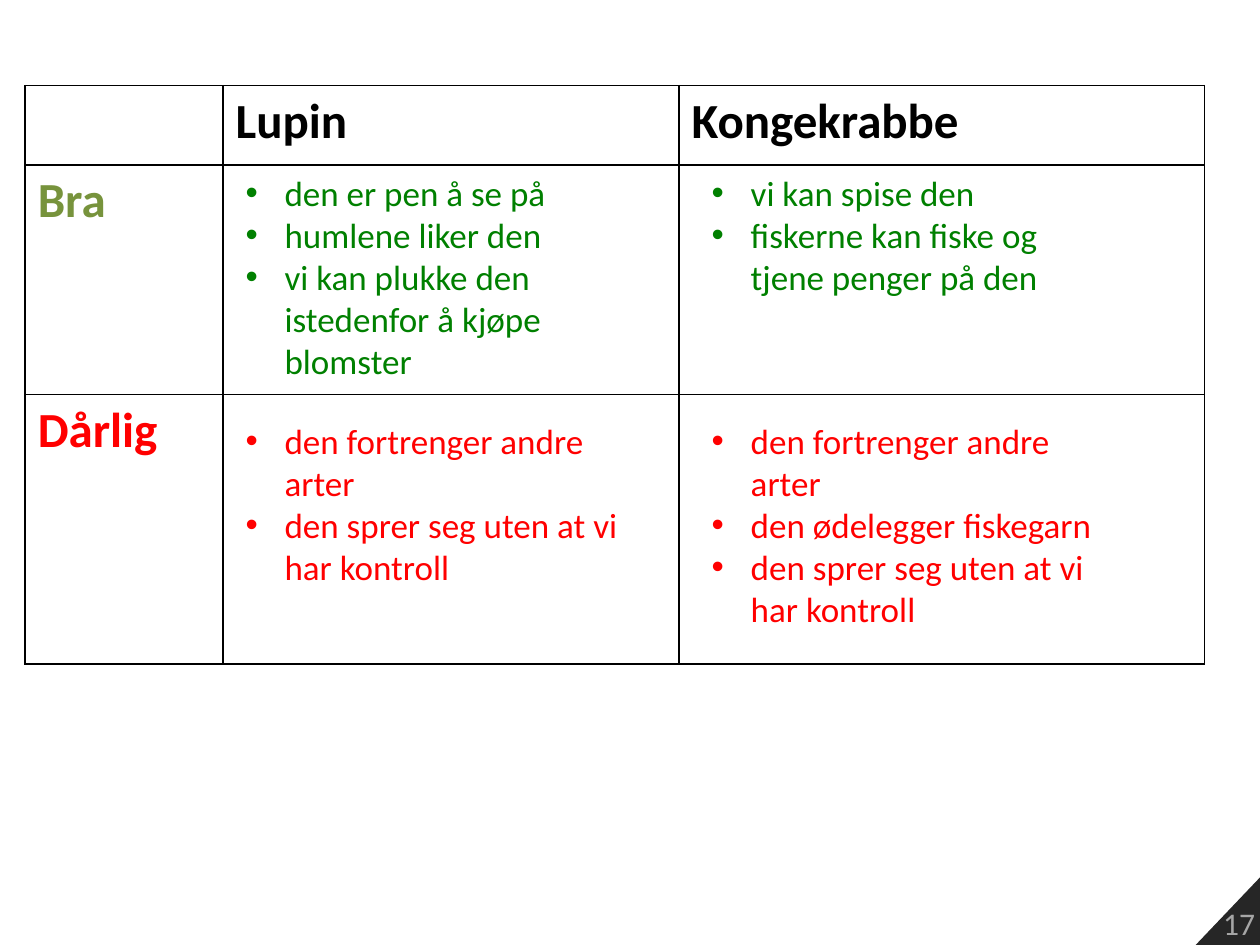
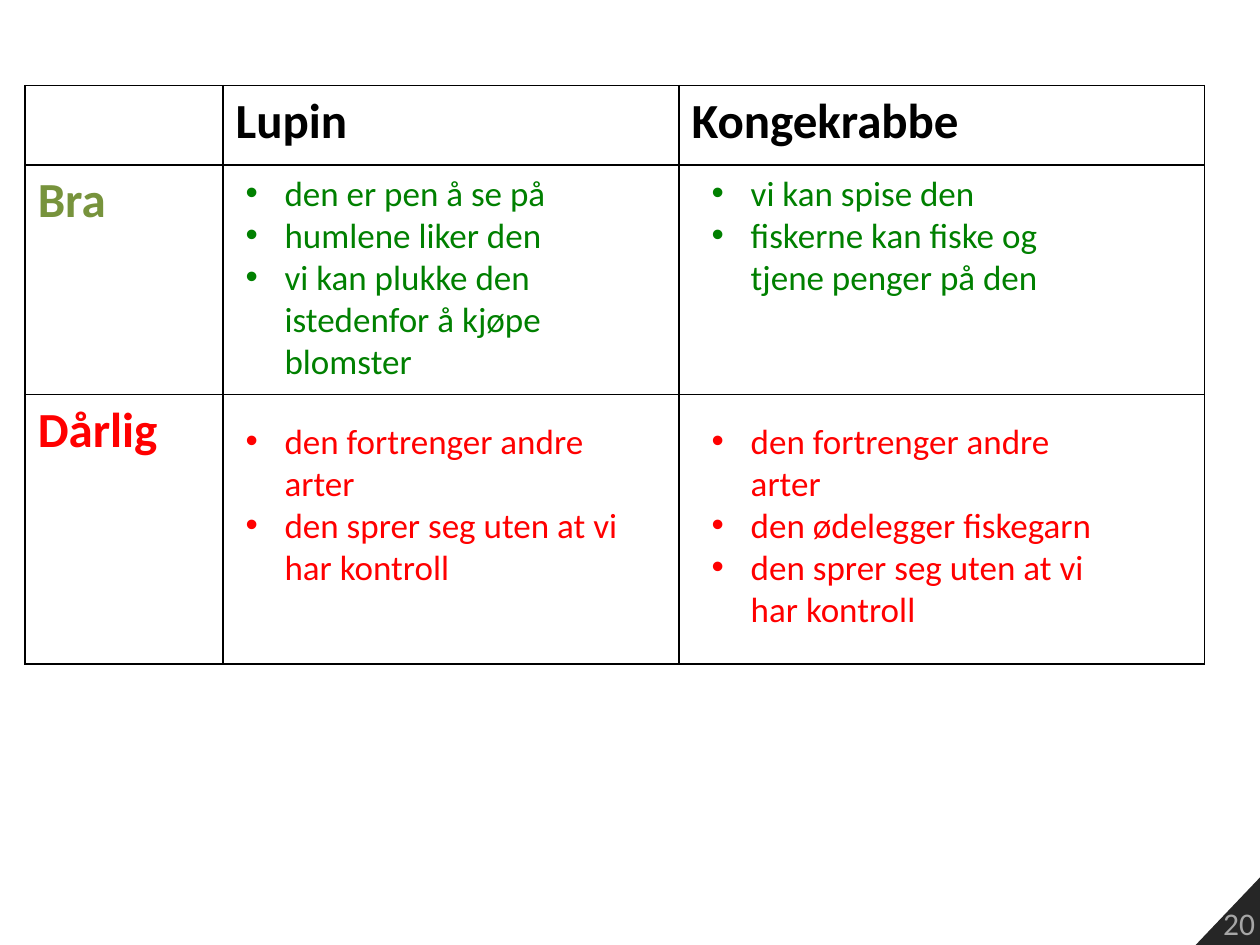
import collections

import lxml.etree
import pptx
import pptx.dml.color
import pptx.enum.text
import pptx.oxml.ns
import pptx.util

FONT = "Calibri"
COLORS = {
    "black": "000000",
    "corner": "262626",
    "number": "A6A6A6",
    "olive": "77933C",
    "green": "008000",
    "red": "FF0000",
}

# The slide is a grid of 100 columns and 75 rows; all boxes are given in it.
GRID_COLUMNS, GRID_ROWS = 100, 75
UNIT = pptx.util.Inches(0.1)
Box = collections.namedtuple("Box", "left top width height")

TABLE_BOX = Box(2, 6.8, 93.7, 45.9)
CORNER_BOX = Box(94.7, 69, 5.9, 6.2)
COLUMN_WIDTHS = (15.7, 36.2, 41.7)
ROW_HEIGHTS = (6.3, 18.2, 21.4)

HEADINGS = {
    (0, 1): ("Lupin", "black"),
    (0, 2): ("Kongekrabbe", "black"),
    (1, 0): ("Bra", "olive"),
    (2, 0): ("Dårlig", "red"),
}

# Offsets of the lists from the table's top left corner
LIST_LEFTS = {"Lupin": 16.5, "Kongekrabbe": 53.5}
LIST_TOPS = {"green": 6.3, "red": 26}
LIST_WIDTH, LINE_HEIGHT, LIST_PADDING = 33.9, 3.34, 1.1
BULLET_INDENT = pptx.util.Inches(0.31)

# Column, colour, drawn lines, points
LISTS = (
    ("Lupin", "green", 5, ("den er pen å se på", "humlene liker den",
                           "vi kan plukke den istedenfor å kjøpe blomster")),
    ("Kongekrabbe", "green", 3, ("vi kan spise den",
                                 "fiskerne kan fiske og tjene penger på den")),
    ("Lupin", "red", 4, ("den fortrenger andre arter",
                         "den sprer seg uten at vi har kontroll")),
    ("Kongekrabbe", "red", 5, ("den fortrenger andre arter",
                               "den ødelegger fiskegarn",
                               "den sprer seg uten at vi har kontroll")),
)


def grid(amount):
    return round(amount * UNIT)


def rgb(name):
    return pptx.dml.color.RGBColor.from_string(COLORS[name])


def add_xml(parent, tag, **attributes):
    return lxml.etree.SubElement(parent, pptx.oxml.ns.qn(tag), attributes)


def write_text(frame, text, size, color, bold=False, bulleted=False,
               align=pptx.enum.text.PP_ALIGN.LEFT):
    """Fill the frame with one paragraph for each line of text."""
    frame.text = text
    for para in frame.paragraphs:
        para.alignment = align
        for span in para.runs:
            span.font.name = FONT
            span.font.size = pptx.util.Pt(size)
            span.font.bold = bold
            span.font.color.rgb = rgb(color)
        if bulleted:
            properties = para._p.get_or_add_pPr()
            properties.set("marL", str(BULLET_INDENT))
            properties.set("indent", str(-BULLET_INDENT))
            add_xml(properties, "a:buFont", typeface="Arial")
            add_xml(properties, "a:buChar", char="•")


def outline_cell(cell):
    properties = cell._tc.get_or_add_tcPr()
    for side in ("a:lnL", "a:lnR", "a:lnT", "a:lnB"):
        line = add_xml(properties, side, w=str(pptx.util.Pt(1)))
        add_xml(add_xml(line, "a:solidFill"), "a:srgbClr", val=COLORS["black"])


def add_comparison_table(page, box):
    table = page.shapes.add_table(len(ROW_HEIGHTS), len(COLUMN_WIDTHS),
                                  *map(grid, box)).table
    table.first_row = table.horz_banding = False
    for column, width in zip(table.columns, COLUMN_WIDTHS):
        column.width = grid(width)
    for row, height in zip(table.rows, ROW_HEIGHTS):
        row.height = grid(height)
    for cell in table.iter_cells():
        outline_cell(cell)
        cell.fill.background()
    for (row, column), (text, color) in HEADINGS.items():
        write_text(table.cell(row, column).text_frame, text,
                   size=28, color=color, bold=True)


def add_point_list(page, box, points, color):
    frame = page.shapes.add_textbox(*map(grid, box)).text_frame
    frame.word_wrap = True
    frame.auto_size = pptx.enum.text.MSO_AUTO_SIZE.SHAPE_TO_FIT_TEXT
    write_text(frame, "\n".join(points), size=20, color=color, bulleted=True)


def add_page_corner(page, box, number):
    """Draw the dark triangle that holds the page number."""
    right, bottom = box.left + box.width, box.top + box.height
    builder = page.shapes.build_freeform(grid(box.left), grid(bottom))
    builder.add_line_segments([(grid(right), grid(box.top)),
                               (grid(right), grid(bottom))])
    corner = builder.convert_to_shape()
    corner.shadow.inherit = False
    corner.fill.solid()
    corner.fill.fore_color.rgb = rgb("corner")
    corner.line.fill.background()
    corner.text_frame.vertical_anchor = pptx.enum.text.MSO_ANCHOR.BOTTOM
    write_text(corner.text_frame, str(number), size=18, color="number",
               align=pptx.enum.text.PP_ALIGN.RIGHT)


def add_comparison_page(deck, number):
    page = deck.slides.add_slide(deck.slide_layouts[6])
    add_page_corner(page, CORNER_BOX, number)
    add_comparison_table(page, TABLE_BOX)
    for species, color, lines, points in LISTS:
        box = Box(TABLE_BOX.left + LIST_LEFTS[species],
                  TABLE_BOX.top + LIST_TOPS[color],
                  LIST_WIDTH, lines * LINE_HEIGHT + LIST_PADDING)
        add_point_list(page, box, points, color)


def main():
    deck = pptx.Presentation()
    deck.slide_width = grid(GRID_COLUMNS)
    deck.slide_height = grid(GRID_ROWS)
    for number in (17, 20):
        add_comparison_page(deck, number)
    deck.save("out.pptx")


if __name__ == "__main__":
    main()
